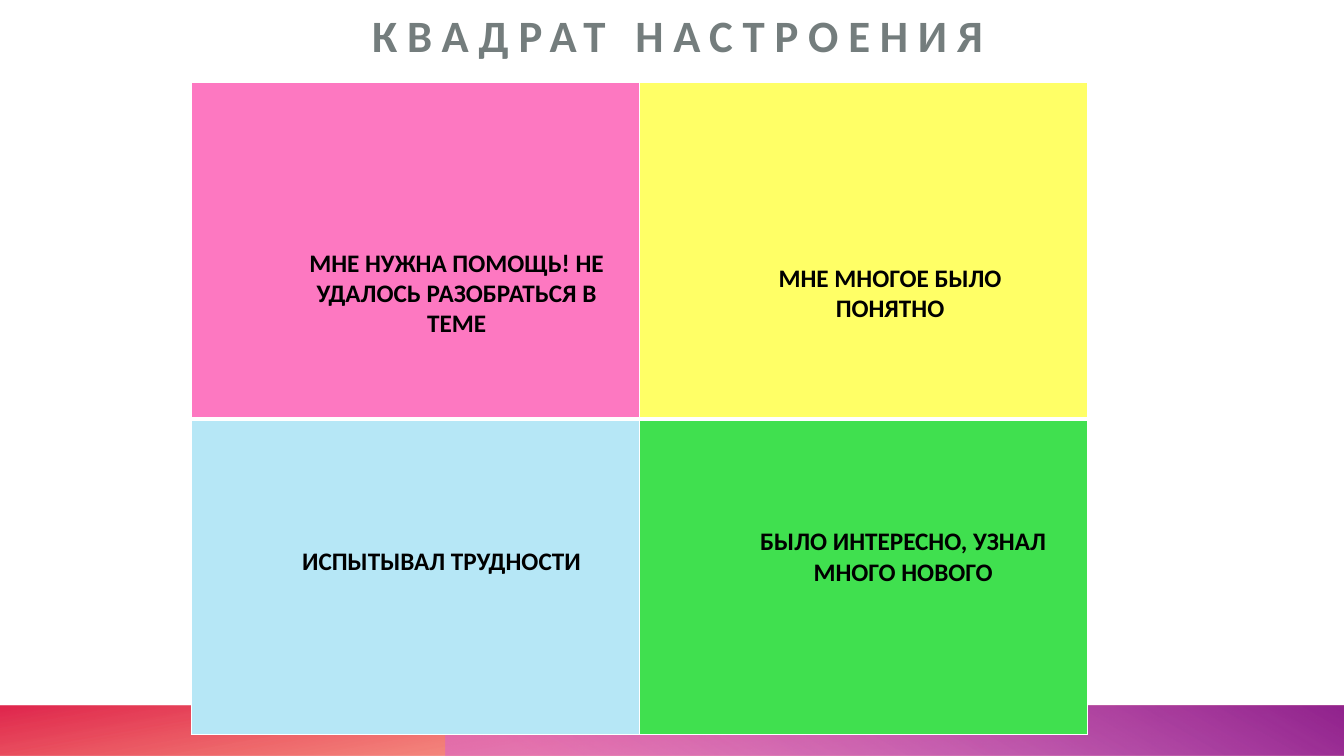
from lxml import etree
from pptx import Presentation
from pptx.dml.color import RGBColor
from pptx.enum.shapes import MSO_SHAPE
from pptx.enum.text import MSO_ANCHOR, MSO_AUTO_SIZE, PP_ALIGN
from pptx.oxml.ns import qn
from pptx.util import Pt

RECTANGLE = MSO_SHAPE.RECTANGLE
BOTTOM = MSO_ANCHOR.BOTTOM
CENTER = PP_ALIGN.CENTER
FIT_SHAPE = MSO_AUTO_SIZE.SHAPE_TO_FIT_TEXT
NO_FIT = MSO_AUTO_SIZE.NONE

TITLE_LAYOUT = 5
SLIDE_WIDTH, SLIDE_HEIGHT = 960, 540
BAND_TOP, BAND_HEIGHT = 504, 36
BAND_SPLIT = 318
LABEL_WIDTH = 229

MOOD_COLORS = [["FD78C1", "FFFF66"], ["B6E7F6", "40E04F"]]
MOOD_LABELS = [
    ("ИСПЫТЫВАЛ ТРУДНОСТИ", 200.9, 386, 29),
    ("МНЕ НУЖНА ПОМОЩЬ! НЕ УДАЛОСЬ РАЗОБРАТЬСЯ В ТЕМЕ", 211.7, 172.8, 72.7),
    ("МНЕ МНОГОЕ БЫЛО ПОНЯТНО", 521.3, 183.6, 51),
    ("БЫЛО ИНТЕРЕСНО, УЗНАЛ МНОГО НОВОГО", 530.6, 372, 51),
]


def color(value):
    return RGBColor.from_string(value)


class MoodSlide:
    title_format = {"name": "Calibri", "size": Pt(32), "bold": True}
    label_format = {"name": "Calibri", "size": Pt(18), "bold": True}
    no_margins = dict.fromkeys(
        ("margin_left", "margin_top", "margin_right", "margin_bottom"), 0)

    def __init__(self, presentation):
        layout = presentation.slide_layouts[TITLE_LAYOUT]
        self.slide = presentation.slides.add_slide(layout)
        self.shapes = self.slide.shapes

    def apply(self, target, values):
        for name, value in values.items():
            setattr(target, name, value)

    def add_text(self, shape, text, font_format, font_color, frame_format):
        frame = shape.text_frame
        self.apply(frame, {"word_wrap": True, **frame_format})
        paragraph = frame.paragraphs[0]
        paragraph.alignment = CENTER
        run = paragraph.add_run()
        run.text = text
        self.apply(run.font, font_format)
        run.font.color.rgb = color(font_color)
        return run

    def title(self, text, left, top, width, height, spacing):
        shape = self.shapes.title
        self.apply(shape, {"left": Pt(left), "top": Pt(top),
                           "width": Pt(width), "height": Pt(height)})
        frame_format = {"vertical_anchor": BOTTOM, "auto_size": NO_FIT,
                        **self.no_margins}
        run = self.add_text(shape, text, self.title_format, "747D7D", frame_format)
        run.font._element.set("spc", str(spacing * 100))

    def band(self, left, width, angle, stops):
        shape = self.shapes.add_shape(
            RECTANGLE, Pt(left), Pt(BAND_TOP), Pt(width), Pt(BAND_HEIGHT))
        shape.shadow.inherit = False
        shape.line.fill.background()
        shape.fill.gradient()
        shape.fill.gradient_angle = angle
        for stop, (position, value, opacity) in zip(shape.fill.gradient_stops, stops):
            stop.position = position
            stop.color.rgb = color(value)
            rgb = stop._gs.find(qn("a:srgbClr"))
            etree.SubElement(rgb, qn("a:alpha")).set("val", str(opacity * 1000))

    def border(self, cell, side, width):
        properties = cell._tc.get_or_add_tcPr()
        line = etree.SubElement(properties, qn(f"a:ln{side}"), w=str(Pt(width)))
        fill = etree.SubElement(line, qn("a:solidFill"))
        etree.SubElement(fill, qn("a:srgbClr"), val="FFFFFF")

    def square(self, left, top, column_width, row_heights, fills):
        frame = self.shapes.add_table(
            len(fills), len(fills[0]), Pt(left), Pt(top),
            Pt(column_width * len(fills[0])), Pt(sum(row_heights)))
        table = frame.table
        self.apply(table, {"first_row": False, "horz_banding": False})
        for column in table.columns:
            column.width = Pt(column_width)
        for row_index, row in enumerate(table.rows):
            row.height = Pt(row_heights[row_index])
            thick_side = "B" if row_index == 0 else "T"
            for cell, value in zip(row.cells, fills[row_index]):
                for side in "LRTB":
                    self.border(cell, side, 3 if side == thick_side else 1)
                cell.fill.solid()
                cell.fill.fore_color.rgb = color(value)

    def label(self, text, left, top, height):
        shape = self.shapes.add_textbox(
            Pt(left), Pt(top), Pt(LABEL_WIDTH), Pt(height))
        self.add_text(shape, text, self.label_format, "000000",
                      {"auto_size": FIT_SHAPE})


def main():
    presentation = Presentation()
    presentation.slide_width = Pt(SLIDE_WIDTH)
    presentation.slide_height = Pt(SLIDE_HEIGHT)
    mood = MoodSlide(presentation)
    mood.band(0, SLIDE_WIDTH, 100,
              [(0.14, "FE4A00", 28), (1, "DA002F", 85)])
    mood.band(BAND_SPLIT, SLIDE_WIDTH - BAND_SPLIT, 60,
              [(0.09, "D861D4", 55), (0.99, "92248E", 100)])
    mood.title("КВАДРАТ НАСТРОЕНИЯ", 100.8, 0, 766.8, 44, 7)
    mood.square(136.8, 59, 320, [240.5, 225], MOOD_COLORS)
    for mood_label in MOOD_LABELS:
        mood.label(*mood_label)
    presentation.save("out.pptx")


if __name__ == "__main__":
    main()
